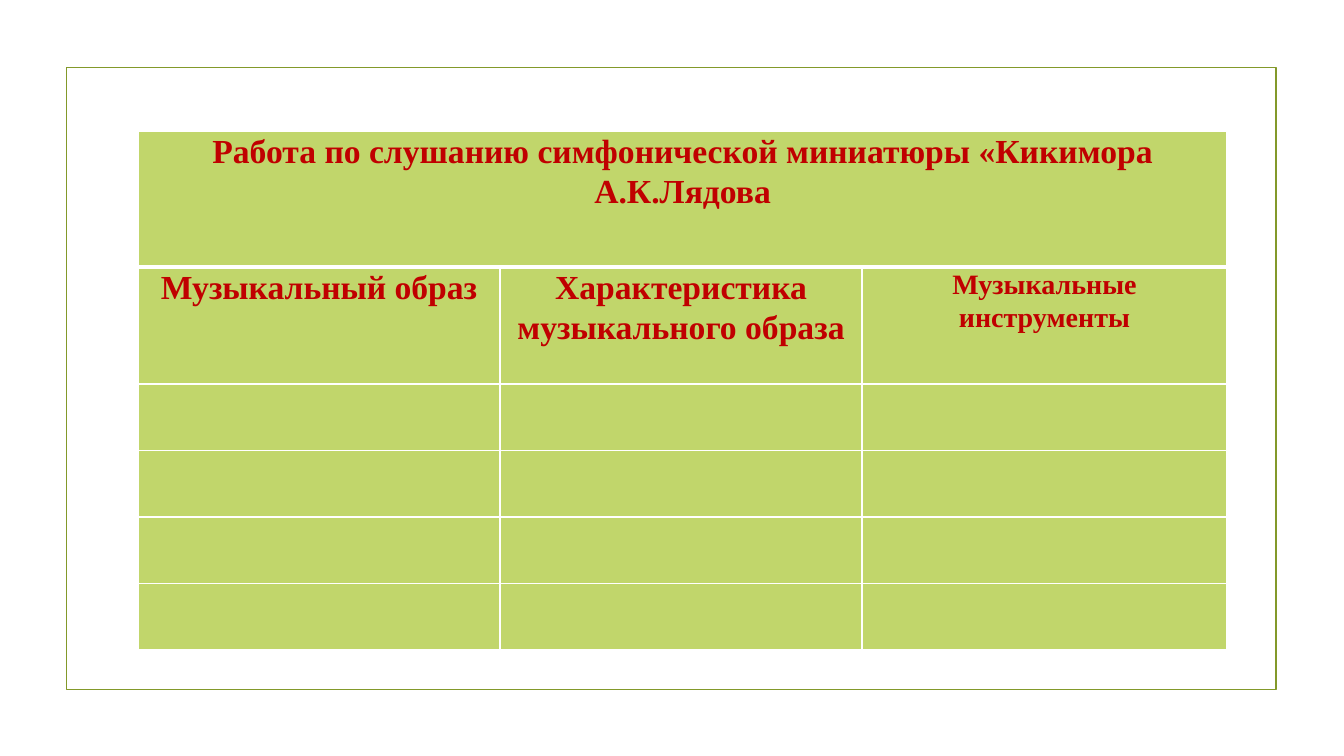
from typing import NamedTuple

from lxml.etree import SubElement
from pptx import Presentation
from pptx.dml.color import RGBColor
from pptx.enum.shapes import MSO_SHAPE
from pptx.enum.text import PP_ALIGN
from pptx.oxml.ns import qn
from pptx.slide import Slide
from pptx.table import Table, _Cell
from pptx.util import Emu, Pt

EMU_PER_PX = 9144  # 100 px to the inch
FONT = "Times New Roman"
FRAME_GREEN = "83992A"
CELL_GREEN = "C1D66B"
HEADING_RED = "C00000"
BORDER_WHITE = "FFFFFF"

COLUMN_WIDTHS = (359, 359, 362)
ROW_HEIGHTS = (135, 116, 66, 66, 66, 66)


class Heading(NamedTuple):
    row: int
    column: int
    text: str
    size: int


HEADINGS = (
    Heading(0, 0, "Работа по слушанию симфонической миниатюры «Кикимора А.К.Лядова", 24),
    Heading(1, 0, "Музыкальный образ", 24),
    Heading(1, 1, "Характеристика музыкального образа", 24),
    Heading(1, 2, "Музыкальные инструменты", 20),
)


def px(length: int) -> Emu:
    return Emu(length * EMU_PER_PX)


def color(value: str) -> RGBColor:
    return RGBColor.from_string(value)


def add_frame(slide: Slide) -> None:
    frame = slide.shapes.add_shape(MSO_SHAPE.RECTANGLE, px(66), px(67), px(1200), px(617))
    frame.shadow.inherit = False
    frame.fill.background()
    frame.line.color.rgb = color(FRAME_GREEN)
    frame.line.width = Pt(1.25)


def set_border(cell: _Cell, side: str, width: int) -> None:
    properties = cell._tc.get_or_add_tcPr()
    line = SubElement(properties, qn(f"a:ln{side}"), w=str(Pt(width)))
    fill = SubElement(line, qn("a:solidFill"))
    SubElement(fill, qn("a:srgbClr"), val=BORDER_WHITE)


def style_cell(cell: _Cell, row: int) -> None:
    """Draw white borders, thicker between the first two rows, and a green fill."""
    widths = {"L": 1, "R": 1, "T": 3 if row == 1 else 1, "B": 3 if row == 0 else 1}
    for side, width in widths.items():
        set_border(cell, side, width)
    cell.fill.solid()
    cell.fill.fore_color.rgb = color(CELL_GREEN)


def write_heading(table: Table, heading: Heading) -> None:
    cell = table.cell(heading.row, heading.column)
    cell.margin_left = cell.margin_right = px(7)
    cell.margin_top = cell.margin_bottom = 0
    paragraph = cell.text_frame.paragraphs[0]
    paragraph.text = heading.text
    paragraph.alignment = PP_ALIGN.CENTER
    paragraph.line_spacing = 1.07
    font = paragraph.font
    font.name = FONT
    font.size = Pt(heading.size)
    font.bold = True
    font.color.rgb = color(HEADING_RED)


def add_worksheet(slide: Slide) -> None:
    table = slide.shapes.add_table(
        len(ROW_HEIGHTS), len(COLUMN_WIDTHS), px(137), px(130),
        px(sum(COLUMN_WIDTHS)), px(sum(ROW_HEIGHTS)),
    ).table
    for column, width in zip(table.columns, COLUMN_WIDTHS):
        column.width = px(width)
    for index, (row, height) in enumerate(zip(table.rows, ROW_HEIGHTS)):
        row.height = px(height)
        for cell in row.cells:
            style_cell(cell, index)
    table.cell(0, 0).merge(table.cell(0, len(COLUMN_WIDTHS) - 1))
    for heading in HEADINGS:
        write_heading(table, heading)


def main() -> None:
    presentation = Presentation()
    presentation.slide_width = px(1333)
    presentation.slide_height = px(750)
    slide = presentation.slides.add_slide(presentation.slide_layouts[6])
    add_frame(slide)
    add_worksheet(slide)
    presentation.save("out.pptx")


if __name__ == "__main__":
    main()
